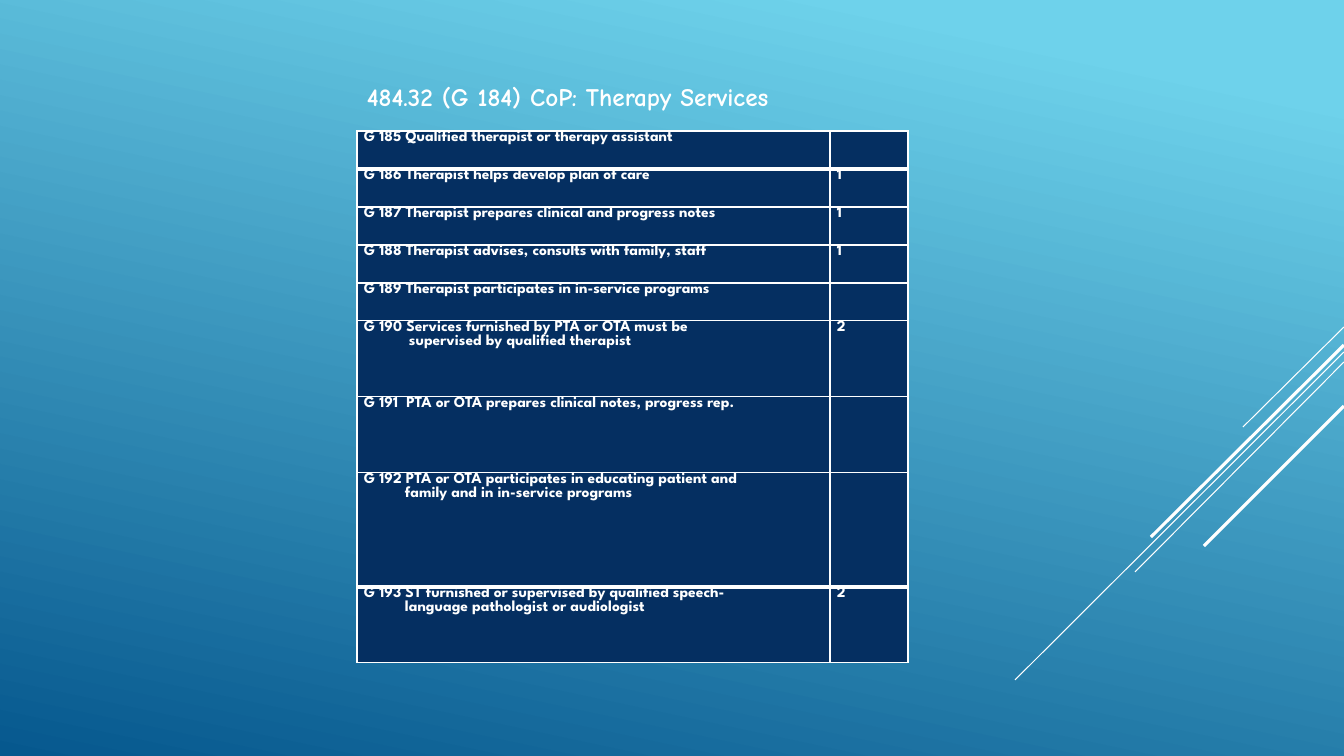
from pptx import Presentation
from pptx import util as u
from pptx.dml.color import RGBColor
from pptx.enum import shapes, text
from pptx.oxml import parse_xml
from pptx.oxml.ns import nsdecls

COLORS = {"white": "FFFFFF", "navy": "052F61", "sky": "6ED2EB", "deep": "06588E"}

ROWS = [
    (38, ["G 185 Qualified therapist or therapy assistant"], "", 0),
    (38, ["G 186 Therapist helps develop plan of care"], "1", 0),
    (38, ["G 187 Therapist prepares clinical and progress notes"], "1", 0),
    (38, ["G 188 Therapist advises, consults with family, staff"], "1", 0),
    (38, ["G 189 Therapist participates in in-service programs"], "", 0),
    (76, ["G 190 Services furnished by PTA or OTA must be",
          "supervised by qualified therapist"], "2", 45),
    (76, ["G 191  PTA or OTA prepares clinical notes, progress rep."], "", 0),
    (114, ["G 192 PTA or OTA participates in educating patient and",
           "family and in in-service programs"], "", 41),
    (76, ["G 193 ST furnished or supervised by qualified speech-",
          "language pathologist or audiologist"], "2", 41),
]
HEAVY_RULES = (1, 8)
STREAKS = [
    (327, 1243, 427, 0.75),
    (352, 1015, 680, 0.75),
    (362, 1135, 572, 0.75),
    (345, 1151, 537, 2.25),
    (406, 1204, 546, 2.25),
]


def px(n):
    return u.Emu(round(n * 914400 / 100.8))


def rgb(name):
    return RGBColor.from_string(COLORS[name])


class Deck:
    title_font = "Comic Neue"
    table_font = "League Spartan"

    def __init__(self, width, height):
        self.prs = Presentation()
        self.prs.slide_width, self.prs.slide_height = px(width), px(height)
        self.s = self.prs.slides.add_slide(self.prs.slide_layouts[6])

    def background(self, start, end, angle):
        fill = self.s.background.fill
        fill.gradient()
        fill.gradient_angle = 360 - angle
        for stop, (name, position) in zip(fill.gradient_stops, (start, end)):
            stop.color.rgb = rgb(name)
            stop.position = position

    def line(self, x1, y1, x2, y2, width):
        c = self.s.shapes.add_connector(
            shapes.MSO_CONNECTOR.STRAIGHT, px(x1), px(y1), px(x2), px(y2))
        c.line.color.rgb = rgb("white")
        c.line.width = u.Pt(width)
        c._element.spPr.append(parse_xml(f"<a:effectLst {nsdecls('a')}/>"))

    def run(self, p, content, font, size):
        r = p.add_run()
        r.text = content
        r.font.name, r.font.size, r.font.bold = font, u.Pt(size), True
        r.font.color.rgb = rgb("white")

    def title(self, x, y, w, h, content):
        sp = self.s.shapes.add_textbox(px(x), px(y), px(w), px(h))
        tf = sp.text_frame
        tf.word_wrap = False
        tf.auto_size = text.MSO_AUTO_SIZE.SHAPE_TO_FIT_TEXT
        self.run(tf.paragraphs[0], content, self.title_font, 18)

    def cell(self, cell, lines, indent, top, bottom):
        cell.margin_left = cell.margin_right = px(7)
        cell.margin_top = cell.margin_bottom = 0
        tf = cell.text_frame
        for i, content in enumerate(lines):
            p = tf.add_paragraph() if i else tf.paragraphs[0]
            if i:
                p._p.get_or_add_pPr().set("marL", str(px(indent)))
            if content:
                self.run(p, content, self.table_font, 11)
        tcPr = cell._tc.get_or_add_tcPr()
        for side, width in (("L", 1), ("R", 1), ("T", top), ("B", bottom)):
            tcPr.append(parse_xml(
                f'<a:ln{side} {nsdecls("a")} w="{u.Pt(width)}"><a:solidFill>'
                f'<a:srgbClr val="{COLORS["white"]}"/></a:solidFill></a:ln{side}>'))
        cell.fill.solid()
        cell.fill.fore_color.rgb = rgb("navy")

    def table(self, x, y, widths, rows, heavy):
        height = sum(row[0] for row in rows)
        table = self.s.shapes.add_table(
            len(rows), len(widths), px(x), px(y), px(sum(widths)), px(height)).table
        table.first_row = table.horz_banding = False
        for column, width in zip(table.columns, widths):
            column.width = px(width)
        for i, (row_height, lines, count, indent) in enumerate(rows):
            table.rows[i].height = px(row_height)
            top, bottom = (3 if edge in heavy else 1 for edge in (i, i + 1))
            self.cell(table.cell(i, 0), lines, indent, top, bottom)
            self.cell(table.cell(i, 1), [count], 0, top, bottom)


def main():
    deck = Deck(1344, 756)
    deck.background(("sky", 0.1), ("deep", 1), 102)
    for y1, x2, y2, width in STREAKS:
        deck.line(1344, y1, x2, y2, width)
    deck.title(357, 76, 504, 40, "484.32 (G 184) CoP: Therapy Services")
    deck.table(357, 131, (473, 78), ROWS, HEAVY_RULES)
    deck.prs.save("out.pptx")


if __name__ == "__main__":
    main()
